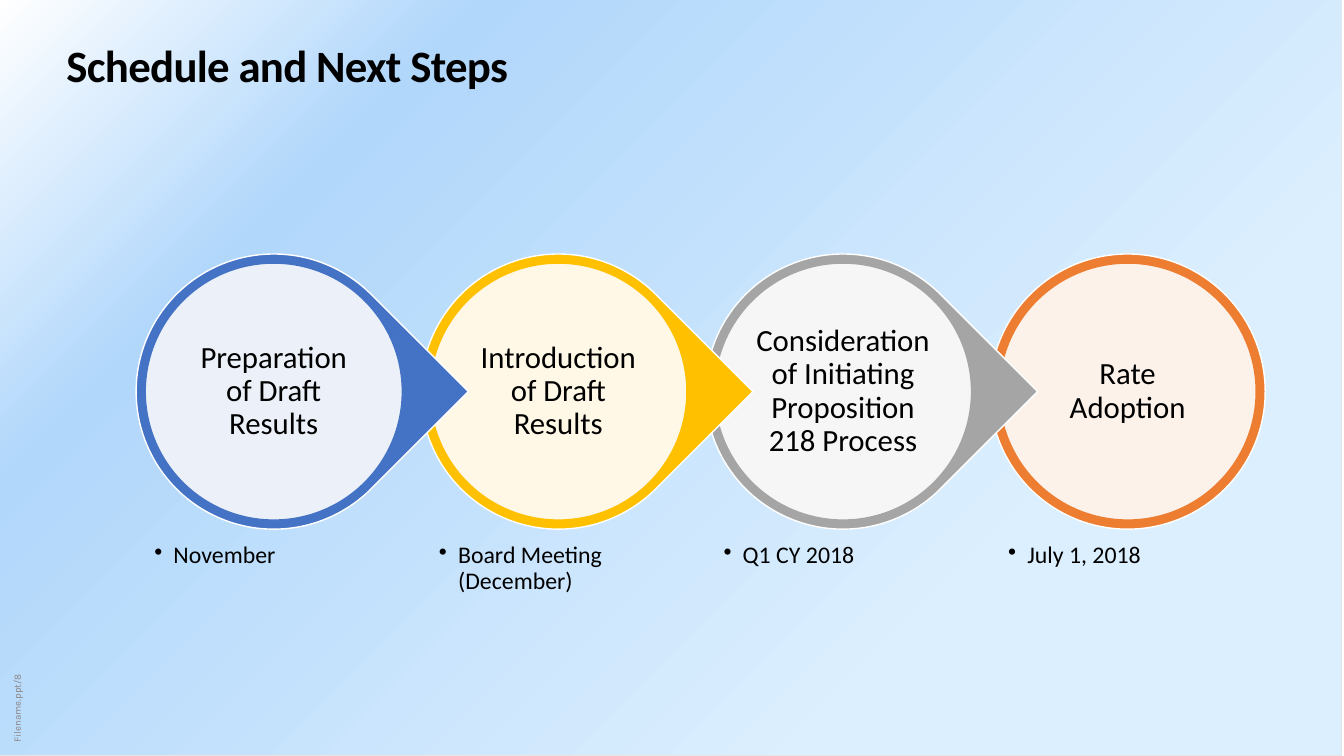
"""Build the schedule slide: four linked milestone circles with dates."""
from dataclasses import dataclass

from lxml import etree
from pptx import Presentation
from pptx import util as u
from pptx.dml.color import RGBColor
from pptx.enum import shapes, text
from pptx.oxml import parse_xml
from pptx.oxml.ns import nsdecls, qn


@dataclass(frozen=True)
class Theme:
    """Colours, fonts and type sizes."""
    ink: str = "000000"
    muted: str = "8B8585"
    white: str = "FFFFFF"
    edge: str = "E7E6E6"
    gradient: tuple = ((25, "DCEFFE"), (77, "B1D7FB"), (100, "FFFFFF"))
    font: str = "Calibri"
    footer_font: str = "Karla"
    title: float = 32
    label: float = 22
    date: float = 17
    footer: float = 7


@dataclass(frozen=True)
class Step:
    """One milestone."""
    label: str
    date: str
    colour: str
    outline: shapes.MSO_SHAPE = shapes.MSO_SHAPE.TEAR


THEME = Theme()
STEPS = (
    Step("Preparation of Draft Results", "November", "4472C4"),
    Step("Introduction of Draft Results", "Board Meeting (December)", "FFC000"),
    Step("Consideration of Initiating Proposition 218 Process", "Q1 CY 2018", "A5A5A5"),
    Step("Rate Adoption", "July 1, 2018", "ED7D31", shapes.MSO_SHAPE.OVAL),
)
FIRST_LEFT, TOP, PITCH = 1.44, 2.61, 2.823
INNER, RIM, LABEL_INSET = 2.55, 0.09, 0.36


def add_shape(page, kind, left: float, top: float, width: float, height: float,
              fill: str, line: str, weight: float = 1):
    """Add a filled, outlined preset shape without shadow."""
    shape = page.shapes.add_shape(kind, u.Inches(left), u.Inches(top),
                                  u.Inches(width), u.Inches(height))
    shape.shadow.inherit = False
    shape.fill.solid()
    shape.fill.fore_color.rgb = RGBColor.from_string(fill)
    shape.line.color.rgb = RGBColor.from_string(line)
    shape.line.width = u.Pt(weight)
    return shape


def add_text(page, words: str, left: float, top: float, width: float, height: float,
             size: float, margin: float = 0.05, anchor=text.MSO_ANCHOR.TOP,
             colour: str = THEME.ink, font: str = THEME.font, bullet: bool = False):
    """Add a wrapped one-paragraph text box and return it."""
    box = page.shapes.add_textbox(u.Inches(left), u.Inches(top),
                                  u.Inches(width), u.Inches(height))
    frame = box.text_frame
    frame.word_wrap = True
    frame.vertical_anchor = anchor
    frame.margin_left = frame.margin_right = u.Inches(margin)
    frame.margin_top = frame.margin_bottom = u.Inches(margin)
    para = frame.paragraphs[0]
    para.add_run().text = words
    if bullet:
        para.level = 1
        properties = para._p.get_or_add_pPr()
        properties.set("marL", str(u.Inches(0.19)))
        properties.set("indent", str(u.Inches(-0.19)))
        etree.SubElement(properties, qn("a:buChar")).set("char", "•")
    para.font.size = u.Pt(size)
    para.font.name = font
    para.font.color.rgb = RGBColor.from_string(colour)
    return box


def add_background(page) -> None:
    """Cover the page with a gradient that spreads from the lower right corner."""
    panel = add_shape(page, shapes.MSO_SHAPE.RECTANGLE, -0.02, 0, 13.33, 7.5,
                      THEME.white, THEME.edge, 0.75)
    stops = "".join(f'<a:gs pos="{place * 1000}"><a:srgbClr val="{colour}"/></a:gs>'
                    for place, colour in THEME.gradient)
    gradient = parse_xml(
        f'<a:gradFill {nsdecls("a")} rotWithShape="1"><a:gsLst>{stops}</a:gsLst>'
        '<a:path path="circle"><a:fillToRect l="100000" t="100000"/></a:path></a:gradFill>')
    solid = panel._element.spPr.find(qn("a:solidFill"))
    solid.getparent().replace(solid, gradient)


def add_step(page, step: Step, left: float) -> None:
    """Draw a milestone with its rim, disc, label and date."""
    outer = INNER + 2 * RIM
    rim = add_shape(page, step.outline, left - RIM, TOP - RIM, outer, outer,
                    step.colour, THEME.white)
    if step.outline == shapes.MSO_SHAPE.TEAR:
        rim.rotation = 45
    disc = add_shape(page, shapes.MSO_SHAPE.OVAL, left, TOP, INNER, INNER,
                     THEME.white, step.colour)
    white = disc._element.spPr.find(qn("a:solidFill")).find(qn("a:srgbClr"))
    etree.SubElement(white, qn("a:alpha")).set("val", "90000")
    side = INNER - 2 * LABEL_INSET
    label = add_text(page, step.label, left + LABEL_INSET, TOP + LABEL_INSET, side, side,
                     THEME.label, 0.03, text.MSO_ANCHOR.MIDDLE)
    date = add_text(page, step.date, left, 5.3, INNER, 1.5, THEME.date, 0.09, bullet=True)
    label.text_frame.paragraphs[0].alignment = text.PP_ALIGN.CENTER
    for box in (label, date):
        box.text_frame.paragraphs[0].line_spacing = 0.9


def main() -> None:
    """Build and save the deck."""
    deck = Presentation()
    deck.slide_width, deck.slide_height = u.Inches(13.33), u.Inches(7.5)
    page = deck.slides.add_slide(deck.slide_layouts[6])
    add_background(page)
    footer = add_text(page, "Filename.ppt/8", -1.17, 5.97, 2.67, 0.22, THEME.footer,
                      anchor=text.MSO_ANCHOR.BOTTOM, colour=THEME.muted,
                      font=THEME.footer_font)
    footer.rotation = 270
    title = add_text(page, "Schedule and Next Steps", 0.56, 0.33, 12.22, 1.17, THEME.title)
    title.text_frame.margin_left = u.Inches(0.1)
    heading = title.text_frame.paragraphs[0]
    heading.font.bold = True
    heading.runs[0]._r.get_or_add_rPr().set("spc", "-50")
    for index, step in reversed(list(enumerate(STEPS))):
        add_step(page, step, FIRST_LEFT + index * PITCH)
    deck.save("out.pptx")


if __name__ == "__main__":
    main()
